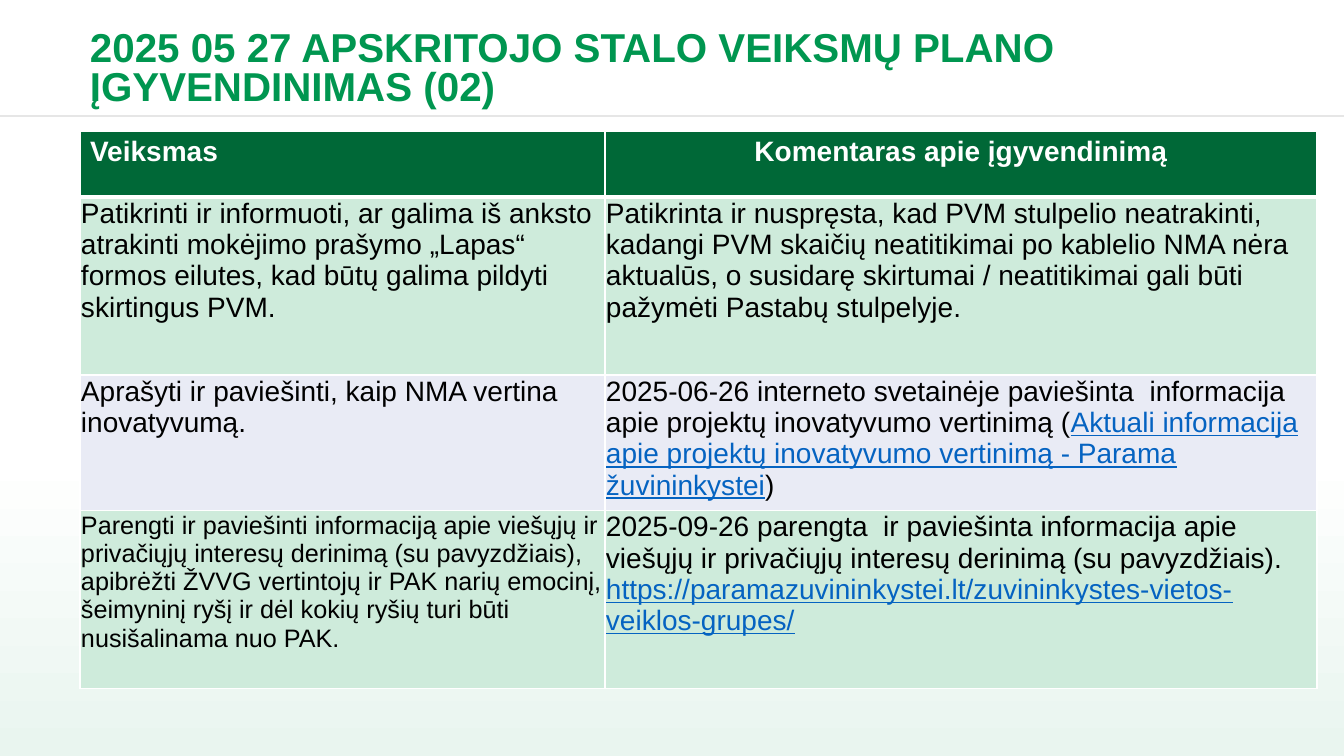
from lxml.etree import SubElement
from pptx import Presentation
from pptx.dml.color import RGBColor
from pptx.enum.shapes import MSO_CONNECTOR, MSO_SHAPE
from pptx.enum.text import MSO_ANCHOR, PP_ALIGN
from pptx.oxml.ns import qn
from pptx.util import Pt

WIDE, HIGH = 1344, 756
UNIT = 12192000 / WIDE
HEX = {
    "white": "FFFFFF", "black": "000000", "mist": "E9F5EF", "rule": "E6E6E6",
    "green": "009650", "dark": "006837", "mint": "CEEBDB", "pale": "E9EBF5",
    "link": "0563C1",
}
HEADS = ["Veiksmas", "Komentaras apie įgyvendinimą"]
ROWS = [
    [
        [("Patikrinti ir informuoti, ar galima iš anksto atrakinti mokėjimo prašymo „Lapas“ "
          "formos eilutes, kad būtų galima pildyti skirtingus PVM.", {})],
        [("Patikrinta ir nuspręsta, kad PVM stulpelio neatrakinti, kadangi PVM skaičių "
          "neatitikimai po kablelio NMA nėra aktualūs, o susidarę skirtumai / neatitikimai "
          "gali būti pažymėti Pastabų stulpelyje.", {})],
    ],
    [
        [("Aprašyti ir paviešinti, kaip NMA vertina inovatyvumą.", {})],
        [("2025-06-26 interneto svetainėje paviešinta  informacija apie projektų "
          "inovatyvumo vertinimą (", {}),
         ("Aktuali informacija apie projektų inovatyvumo vertinimą - Parama žuvininkystei",
          {"color": "link", "underline": True}),
         (")", {})],
    ],
    [
        [("Parengti ir paviešinti informaciją apie viešųjų ir privačiųjų interesų derinimą "
          "(su pavyzdžiais), apibrėžti ŽVVG vertintojų ir PAK narių emocinį, šeimyninį ryšį "
          "ir dėl kokių ryšių turi būti nusišalinama nuo PAK.", {"size": 18})],
        [("2025-09-26 parengta  ir paviešinta informacija apie viešųjų ir privačiųjų "
          "interesų derinimą (su pavyzdžiais). ", {}),
         ("https://paramazuvininkystei.lt/zuvininkystes-vietos-veiklos-grupes/",
          {"color": "link", "underline": True})],
    ],
]


def px(num):
    return round(num * UNIT)


def rgb(name):
    return RGBColor.from_string(HEX[name])


class Page:
    font = "Arial"

    def __init__(self, deck):
        self.slide = deck.slides.add_slide(deck.slide_layouts[6])
        self.shapes = self.slide.shapes

    def apply(self, item, form):
        for key, val in form.items():
            setattr(item, key, val)

    def words(self, para, runs, **base):
        for text, extra in runs:
            form = {"name": self.font, **base, **extra}
            color = form.pop("color")
            form["size"] = Pt(form["size"])
            run = para.add_run()
            run.text = text
            self.apply(run.font, form)
            run.font.color.rgb = rgb(color)

    def fade(self, *box, stops):
        shape = self.shapes.add_shape(MSO_SHAPE.RECTANGLE, *map(px, box))
        shape.shadow.inherit = False
        shape.line.fill.background()
        shape.fill.gradient()
        shape.fill.gradient_angle = 90
        for stop, (place, color) in zip(shape.fill.gradient_stops, stops):
            stop.position = place
            stop.color.rgb = rgb(color)

    def rule(self, *ends, color):
        line = self.shapes.add_connector(MSO_CONNECTOR.STRAIGHT, *map(px, ends))
        line.line.color.rgb = rgb(color)
        line.line.width = Pt(1)
        SubElement(line._element.spPr, qn("a:effectLst"))

    def title(self, *box, text):
        frame = self.shapes.add_textbox(*map(px, box)).text_frame
        self.apply(frame, {"word_wrap": True, "vertical_anchor": MSO_ANCHOR.MIDDLE})
        para = frame.paragraphs[0]
        para.line_spacing = 0.8
        self.words(para, [(text, {})], size=28.8, bold=True, color="green")

    def edges(self, cell, **thick):
        props = cell._tc.get_or_add_tcPr()
        for side in "LRTB":
            line = SubElement(props, qn(f"a:ln{side}"), w=str(Pt(thick.get(side, 1))))
            fill = SubElement(line, qn("a:solidFill"))
            SubElement(fill, qn("a:srgbClr"), val=HEX["white"])

    def paint(self, cell, color):
        cell.fill.solid()
        cell.fill.fore_color.rgb = rgb(color)

    def table(self, left, top, cols, rows, heads, body, fills):
        grid = self.shapes.add_table(
            len(rows), len(cols), px(left), px(top), px(sum(cols)), px(sum(rows))).table
        for col, wide in zip(grid.columns, cols):
            col.width = px(wide)
        for row, high in zip(grid.rows, rows):
            row.height = px(high)
        for col, (text, align) in enumerate(zip(heads, (PP_ALIGN.LEFT, PP_ALIGN.CENTER))):
            cell = grid.cell(0, col)
            self.edges(cell, B=3)
            self.paint(cell, "dark")
            para = cell.text_frame.paragraphs[0]
            para.alignment = align
            self.words(para, [(text, {})], size=20, bold=True, color="white")
        inset = {"margin_left": px(1), "margin_right": px(1),
                 "margin_top": px(1), "margin_bottom": 0}
        for row, (line, fill) in enumerate(zip(body, fills), 1):
            for col, runs in enumerate(line):
                cell = grid.cell(row, col)
                self.apply(cell, inset)
                self.edges(cell, T=3 if row == 1 else 1)
                self.paint(cell, fill)
                self.words(cell.text_frame.paragraphs[0], runs,
                           size=20, bold=False, color="black")


def main():
    deck = Presentation()
    deck.slide_width, deck.slide_height = px(WIDE), px(HIGH)
    page = Page(deck)
    page.fade(0, 0, WIDE, HIGH, stops=[(0, "mist"), (0.4, "white")])
    page.rule(0, 116, WIDE, 116, color="rule")
    page.title(80, 24, 1077, 93,
               text="2025 05 27 APSKRITOJO STALO VEIKSMŲ PLANO ĮGYVENDINIMAS (02)")
    page.table(80, 131, [525, 712], [66, 178, 127, 178],
               HEADS, ROWS, ["mint", "pale", "mint"])
    deck.save("out.pptx")


if __name__ == "__main__":
    main()
